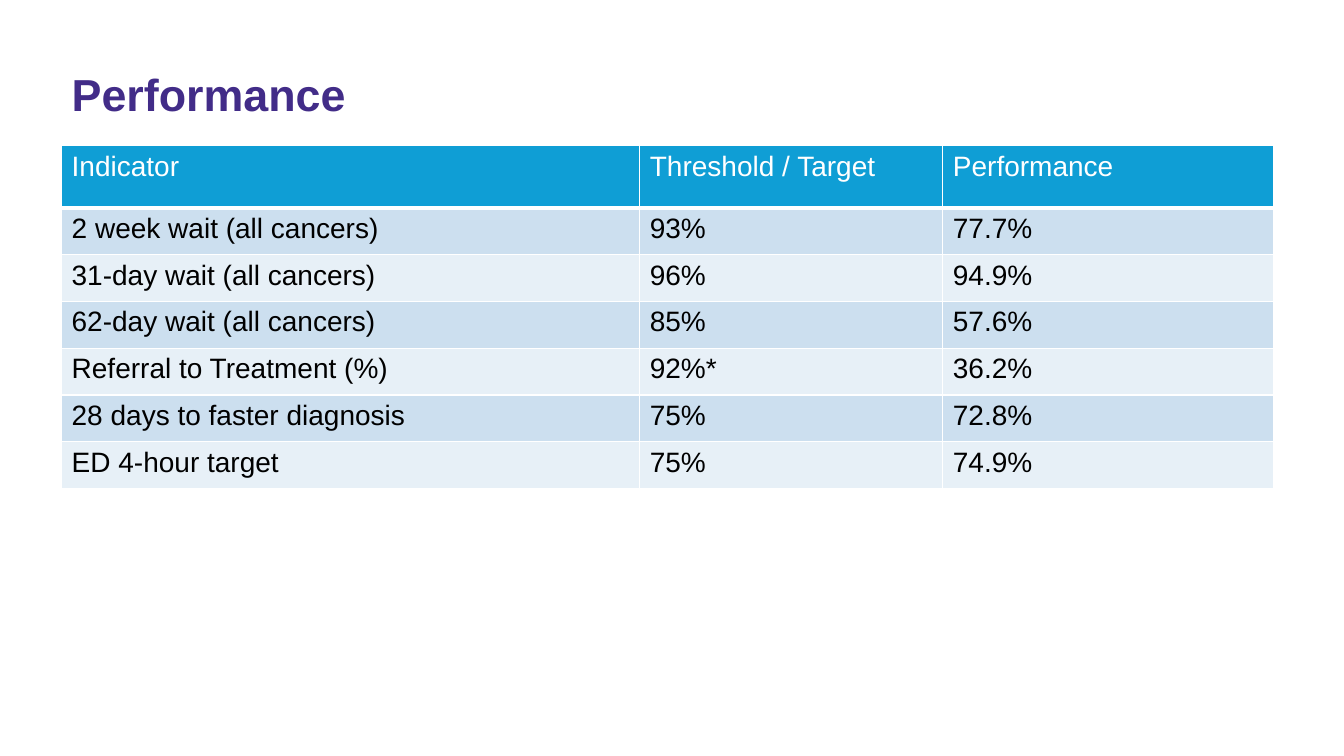
"""Build the performance slide: a title above a banded table of indicators."""
from lxml import etree
from pptx import Presentation
from pptx import util as u
from pptx.dml import color
from pptx.enum import text
from pptx.oxml import ns

ROWS = [
    ("Indicator", "Threshold / Target", "Performance"),
    ("2 week wait (all cancers)", "93%", "77.7%"),
    ("31-day wait (all cancers)", "96%", "94.9%"),
    ("62-day wait (all cancers)", "85%", "57.6%"),
    ("Referral to Treatment (%)", "92%*", "36.2%"),
    ("28 days to faster diagnosis", "75%", "72.8%"),
    ("ED 4-hour target", "75%", "74.9%"),
]


def rgb(value):
    return color.RGBColor.from_string(value)


class Deck:
    font = "Arial"
    purple, blue, white, black = "422C88", "0F9ED5", "FFFFFF", "000000"
    bands = ("CCDFEF", "E7F0F7")
    left = 44

    def __init__(self):
        self.prs = Presentation()
        self.prs.slide_width, self.prs.slide_height = u.Pt(960), u.Pt(540)
        self.slide = self.prs.slides.add_slide(self.prs.slide_layouts[5])

    def style(self, tf, size, hex_color, bold=False):
        for p in tf.paragraphs:
            p.alignment = text.PP_ALIGN.LEFT
            for r in p.runs:
                r.font.name, r.font.size, r.font.bold = self.font, u.Pt(size), bold
                r.font.color.rgb = rgb(hex_color)

    def title(self, words, top, width, height):
        sp = self.slide.shapes.title
        sp.left, sp.top = u.Pt(self.left), u.Pt(top)
        sp.width, sp.height = u.Pt(width), u.Pt(height)
        tf = sp.text_frame
        tf.text = words
        tf.auto_size = text.MSO_AUTO_SIZE.NONE
        tf.vertical_anchor = text.MSO_ANCHOR.TOP
        tf.margin_top = u.Pt(7)
        self.style(tf, 32, self.purple, True)

    def border(self, cell, side, width):
        tc_pr = cell._tc.get_or_add_tcPr()
        ln = etree.SubElement(tc_pr, ns.qn(f"a:ln{side}"), w=str(u.Pt(width)))
        fill = etree.SubElement(ln, ns.qn("a:solidFill"))
        etree.SubElement(fill, ns.qn("a:srgbClr"), val=self.white)

    def cell(self, cell, words, header, fill):
        cell.text = words
        self.style(cell.text_frame, 20, self.white if header else self.black)
        for side in "LRTB":
            self.border(cell, side, 3 if header and side == "B" else 1)
        cell.fill.solid()
        cell.fill.fore_color.rgb = rgb(fill)

    def table(self, rows, top, widths, header_height, row_height):
        height = header_height + row_height * (len(rows) - 1)
        frame = self.slide.shapes.add_table(
            len(rows), len(widths), u.Pt(self.left), u.Pt(top),
            u.Pt(sum(widths)), u.Pt(height))
        table = frame.table
        for column, width in zip(table.columns, widths):
            column.width = u.Pt(width)
        for i, row in enumerate(rows):
            header = i == 0
            table.rows[i].height = u.Pt(header_height if header else row_height)
            fill = self.blue if header else self.bands[(i - 1) % 2]
            for j, words in enumerate(row):
                self.cell(table.cell(i, j), words, header, fill)


def main():
    deck = Deck()
    deck.title("Performance", 40.3, 731, 59)
    deck.table(ROWS, 104, (413, 216.5, 236.5), 44.6, 33.4)
    deck.prs.save("out.pptx")


if __name__ == "__main__":
    main()
